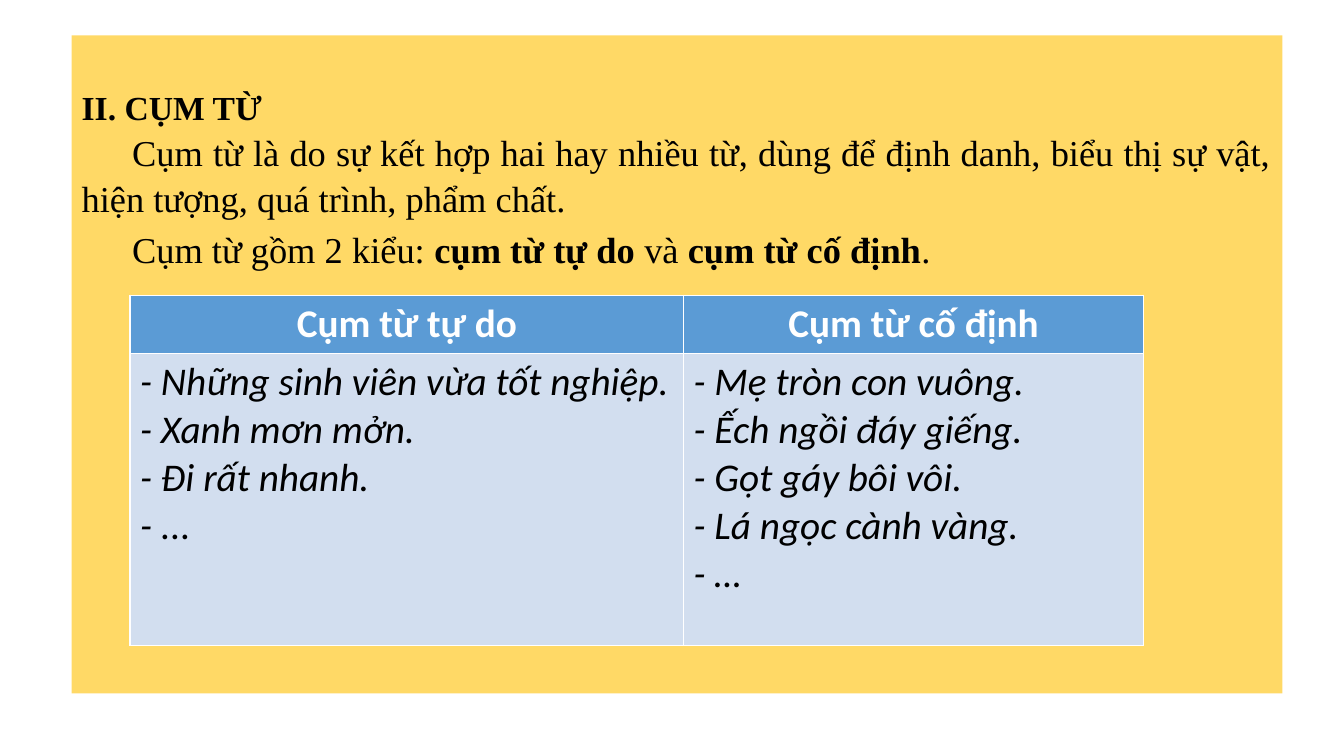
from pptx import Presentation
from pptx.dml.color import RGBColor
from pptx.enum.text import MSO_ANCHOR, MSO_AUTO_SIZE, PP_ALIGN
from pptx.util import Inches, Pt
from lxml.etree import SubElement
from pptx.oxml.ns import qn

# Content: paragraphs are lists of (text, bold)
HEAD = "II. CỤM TỪ"
BODY = [
    [("Cụm từ là do sự kết hợp hai hay nhiều từ, dùng để định danh, "
      "biểu thị sự vật, hiện tượng, quá trình, phẩm chất.", False)],
    [("Cụm từ gồm 2 kiểu: ", False), ("cụm từ tự do ", True), ("và ", False),
     ("cụm từ cố định", True), (".", False)],
]
TABLE = {
    "Cụm từ tự do": ["- Những sinh viên vừa tốt nghiệp.", "- Xanh mơn mởn.",
                     "- Đi rất nhanh.", "- ..."],
    "Cụm từ cố định": ["- Mẹ tròn con vuông.", "- Ếch ngồi đáy giếng.",
                       "- Gọt gáy bôi vôi.", "- Lá ngọc cành vàng.", "- …"],
}
WIDTHS = [5.49, 4.56]
HEIGHTS = [0.57, 2.9]
SERIF, SANS = "Times New Roman", "Calibri"


def color(code):
    return RGBColor.from_string(code)


def paint(shape, code):
    shape.fill.solid()
    shape.fill.fore_color.rgb = color(code)


def style(para, face, size, code, bold=None, italic=None):
    font = para.font
    font.name, font.size, font.bold, font.italic = face, Pt(size), bold, italic
    font.color.rgb = color(code)


def place(shape, left, top, width, height):
    shape.left, shape.top = Inches(left), Inches(top)
    shape.width, shape.height = Inches(width), Inches(height)
    shape.text_frame.auto_size = MSO_AUTO_SIZE.NONE


deck = Presentation()
deck.slide_width, deck.slide_height = Inches(13.33), Inches(7.5)
slide = deck.slides.add_slide(deck.slide_layouts[1])
title, body = slide.placeholders

# Yellow panel with the definition
place(body, 0.71, 0.35, 12.01, 6.53)
paint(body, "FFD966")
frame = body.text_frame
frame.margin_top = Inches(0.92)
frame.vertical_anchor = MSO_ANCHOR.TOP
for i, runs in enumerate(BODY):
    para = frame.paragraphs[0] if i == 0 else frame.add_paragraph()
    para.alignment = PP_ALIGN.JUSTIFY
    para.line_spacing, para.space_before = 1.05, Pt(4)
    style(para, SERIF, 26, "000000")
    props = para._p.get_or_add_pPr()
    props.set("marL", "0")
    props.set("indent", str(Inches(0.5)))
    props.insert_element_before(SubElement(props, qn("a:buNone")),
                                "a:tabLst", "a:defRPr", "a:extLst")
    for text, bold in runs:
        run = para.add_run()
        run.text, run.font.bold = text, bold

# Heading, in front of the panel
place(title, 0.71, 0.82, 12.01, 0.48)
title.text_frame.text = HEAD
title.text_frame.vertical_anchor = MSO_ANCHOR.MIDDLE
title.text_frame.paragraphs[0].alignment = PP_ALIGN.LEFT
style(title.text_frame.paragraphs[0], SERIF, 24, "000000", bold=True)
body.element.addnext(title.element)

# Table of the two kinds
table = slide.shapes.add_table(2, len(TABLE), Inches(1.29), Inches(2.93),
                               Inches(sum(WIDTHS)), Inches(sum(HEIGHTS))).table
for row, height in zip(table.rows, HEIGHTS):
    row.height = Inches(height)
for col, (kind, items) in enumerate(TABLE.items()):
    table.columns[col].width = Inches(WIDTHS[col])
    top, cell = table.cell(0, col), table.cell(1, col)
    paint(top, "5B9BD5")
    paint(cell, "D2DEEF")
    top.text, cell.text = kind, "\n".join(items)
    top.text_frame.paragraphs[0].alignment = PP_ALIGN.CENTER
    style(top.text_frame.paragraphs[0], SANS, 28, "FFFFFF", bold=True)
    for para in cell.text_frame.paragraphs:
        style(para, SANS, 28, "000000", bold=False, italic=True)

deck.save("out.pptx")
